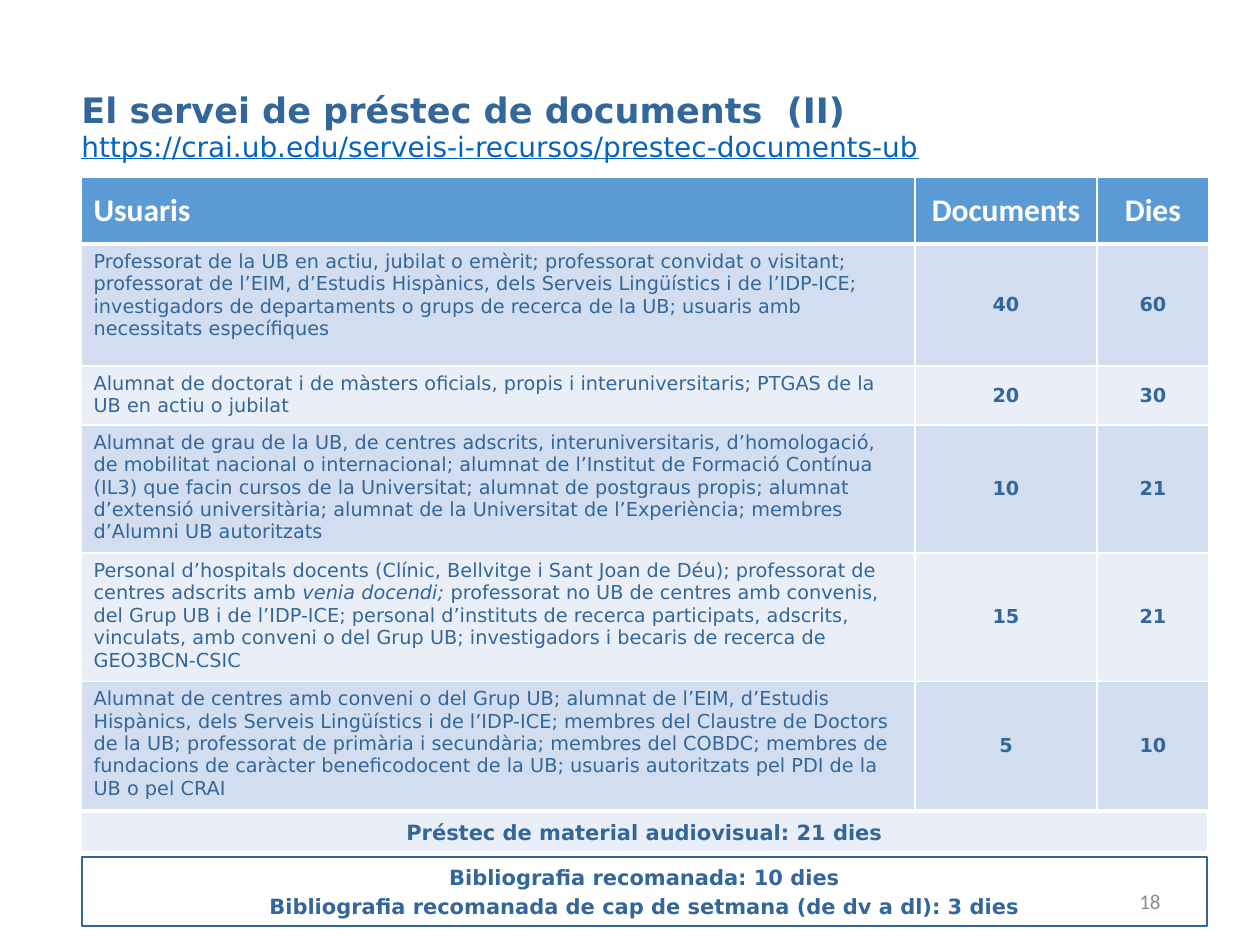
from lxml import etree
from pptx import Presentation
from pptx.dml.color import RGBColor
from pptx.enum.shapes import MSO_SHAPE
from pptx.enum.text import MSO_ANCHOR, PP_ALIGN
from pptx.oxml.ns import qn
from pptx.util import Emu, Pt

RECT = MSO_SHAPE.RECTANGLE
TOP, MID = MSO_ANCHOR.TOP, MSO_ANCHOR.MIDDLE
LEFT, MIDST, RIGHT = PP_ALIGN.LEFT, PP_ALIGN.CENTER, PP_ALIGN.RIGHT

SCALE = 914400 / 126  # EMU in one px
COLS = {"ink": "336699", "link": "0563C1", "gray": "8C8C8C", "white": "FFFFFF",
        "head": "5B9BD5", "dark": "D2DEEF", "pale": "EAEFF7"}
SANS, CALI = "DejaVu Sans", "Calibri"
FORMS = {
    "title": ("ink", {"name": SANS, "size": Pt(20), "bold": True}),
    "link": ("link", {"name": SANS, "size": Pt(16), "underline": True}),
    "page": ("gray", {"name": CALI, "size": Pt(12)}),
    "head": ("white", {"name": CALI, "size": Pt(18), "bold": True}),
    "body": ("ink", {"name": SANS, "size": Pt(11), "bold": False}),
    "slant": ("ink", {"name": SANS, "size": Pt(11), "bold": False, "italic": True}),
    "count": ("ink", {"name": SANS, "size": Pt(11), "bold": True}),
    "note": ("ink", {"name": SANS, "size": Pt(12), "bold": True}),
}


def px(num):
    return Emu(round(num * SCALE))


def tint(name):
    return RGBColor.from_string(COLS[name])


class Deck:
    def __init__(self, wide, high):
        self.prs = Presentation()
        self.prs.slide_width, self.prs.slide_height = px(wide), px(high)
        self.slide = self.prs.slides.add_slide(self.prs.slide_layouts[6])

    def words(self, frame, lines, form, align=LEFT, gap=0, lead=None):
        """Each line is a string or a list of (text, form) runs."""
        for num, line in enumerate(lines):
            para = frame.paragraphs[0] if num == 0 else frame.add_paragraph()
            para.alignment = align
            if lead:
                para.line_spacing = lead
            if num:
                para.space_before = Pt(gap)
            for text, kind in [(line, form)] if isinstance(line, str) else line:
                run = para.add_run()
                run.text = text
                hue, vals = FORMS[kind]
                for key, val in vals.items():
                    setattr(run.font, key, val)
                run.font.color.rgb = tint(hue)

    def text(self, box, line, form, align=LEFT, anchor=MID, wrap=True, lead=None):
        frame = self.slide.shapes.add_textbox(*map(px, box)).text_frame
        frame.word_wrap, frame.vertical_anchor = wrap, anchor
        self.words(frame, [line], form, align, lead=lead)

    def panel(self, box, lines, fill=None, edge=None):
        shape = self.slide.shapes.add_shape(RECT, *map(px, box))
        shape.shadow.inherit = False
        if fill:
            shape.fill.solid()
            shape.fill.fore_color.rgb = tint(fill)
        else:
            shape.fill.background()
        if edge:
            shape.line.color.rgb = tint(edge)
            shape.line.width = Pt(0.75)
        else:
            shape.line.fill.background()
        frame = shape.text_frame
        frame.word_wrap, frame.vertical_anchor = True, MID
        self.words(frame, lines, "note", MIDST, gap=2.4)

    def edges(self, cell, sizes):
        props = cell._tc.get_or_add_tcPr()
        for side, size in sizes.items():
            line = etree.SubElement(props, qn("a:ln" + side), w=str(Pt(size)))
            fill = etree.SubElement(line, qn("a:solidFill"))
            etree.SubElement(fill, qn("a:srgbClr"), val=COLS["white"])

    def table(self, left, top, wides, highs, rows):
        grid = self.slide.shapes.add_table(
            len(highs), len(wides), px(left), px(top),
            px(sum(wides)), px(sum(highs))).table
        for col, wide in zip(grid.columns, wides):
            col.width = px(wide)
        for row, high in zip(grid.rows, highs):
            row.height = px(high)
        for r, row in enumerate(rows):
            band = "head" if r == 0 else "dark" if r % 2 else "pale"
            for c, line in enumerate(row):
                cell = grid.cell(r, c)
                self.edges(cell, {"L": 1, "R": 1, "T": 3 if r == 1 else 1,
                                  "B": 3 if r == 0 else 1})
                cell.fill.solid()
                cell.fill.fore_color.rgb = tint(band)
                cell.vertical_anchor = TOP if r and c == 0 else MID
                form = "head" if r == 0 else "count" if c else "body"
                self.words(cell.text_frame, [line], form, MIDST if c else LEFT)


ROWS = [
    ("Usuaris", "Documents", "Dies"),
    ("Professorat de la UB en actiu, jubilat o emèrit; professorat convidat o visitant; "
     "professorat de l’EIM, d’Estudis Hispànics, dels Serveis Lingüístics i de l’IDP-ICE; "
     "investigadors de departaments o grups de recerca de la UB; usuaris amb "
     "necessitats específiques", "40", "60"),
    ("Alumnat de doctorat i de màsters oficials, propis i interuniversitaris; PTGAS de la "
     "UB en actiu o jubilat", "20", "30"),
    ("Alumnat de grau de la UB, de centres adscrits, interuniversitaris, d’homologació, "
     "de mobilitat nacional o internacional; alumnat de l’Institut de Formació Contínua "
     "(IL3) que facin cursos de la Universitat; alumnat de postgraus propis; alumnat "
     "d’extensió universitària; alumnat de la Universitat de l’Experiència; membres "
     "d’Alumni UB autoritzats", "10", "21"),
    ([("Personal d’hospitals docents (Clínic, Bellvitge i Sant Joan de Déu); professorat de "
       "centres adscrits amb ", "body"),
      ("venia docendi; ", "slant"),
      ("professorat no UB de centres amb convenis, del Grup UB i de l’IDP-ICE; personal "
       "d’instituts de recerca participats, adscrits, vinculats, amb conveni o del Grup UB; "
       "investigadors i becaris de recerca de GEO3BCN-CSIC", "body")], "15", "21"),
    ("Alumnat de centres amb conveni o del Grup UB; alumnat de l’EIM, d’Estudis "
     "Hispànics, dels Serveis Lingüístics i de l’IDP-ICE; membres del Claustre de Doctors "
     "de la UB; professorat de primària i secundària; membres del COBDC; membres de "
     "fundacions de caràcter beneficodocent de la UB; usuaris autoritzats pel PDI de la "
     "UB o pel CRAI", "5", "10"),
]


def main():
    deck = Deck(1260, 945)

    # Page number and heading
    deck.text((890, 876, 283, 50), "18", "page", RIGHT)
    deck.text((69, 87, 890, 50), "El servei de préstec de documents  (II)", "title", lead=0.9)
    deck.text((69, 123, 896, 47), "https://crai.ub.edu/serveis-i-recursos/prestec-documents-ub",
              "link", anchor=TOP, wrap=False)

    # Loan terms for each kind of user
    deck.table(81, 177, (834, 182, 112), (67, 122, 59, 128, 128, 128), ROWS)

    # Special loans
    deck.panel((82, 813, 1125, 38), ["Préstec de material audiovisual: 21 dies"], fill="pale")
    deck.panel((82, 857, 1125, 69),
               ["Bibliografia recomanada: 10 dies",
                "Bibliografia recomanada de cap de setmana (de dv a dl): 3 dies"], edge="ink")

    deck.prs.save("out.pptx")


if __name__ == "__main__":
    main()
